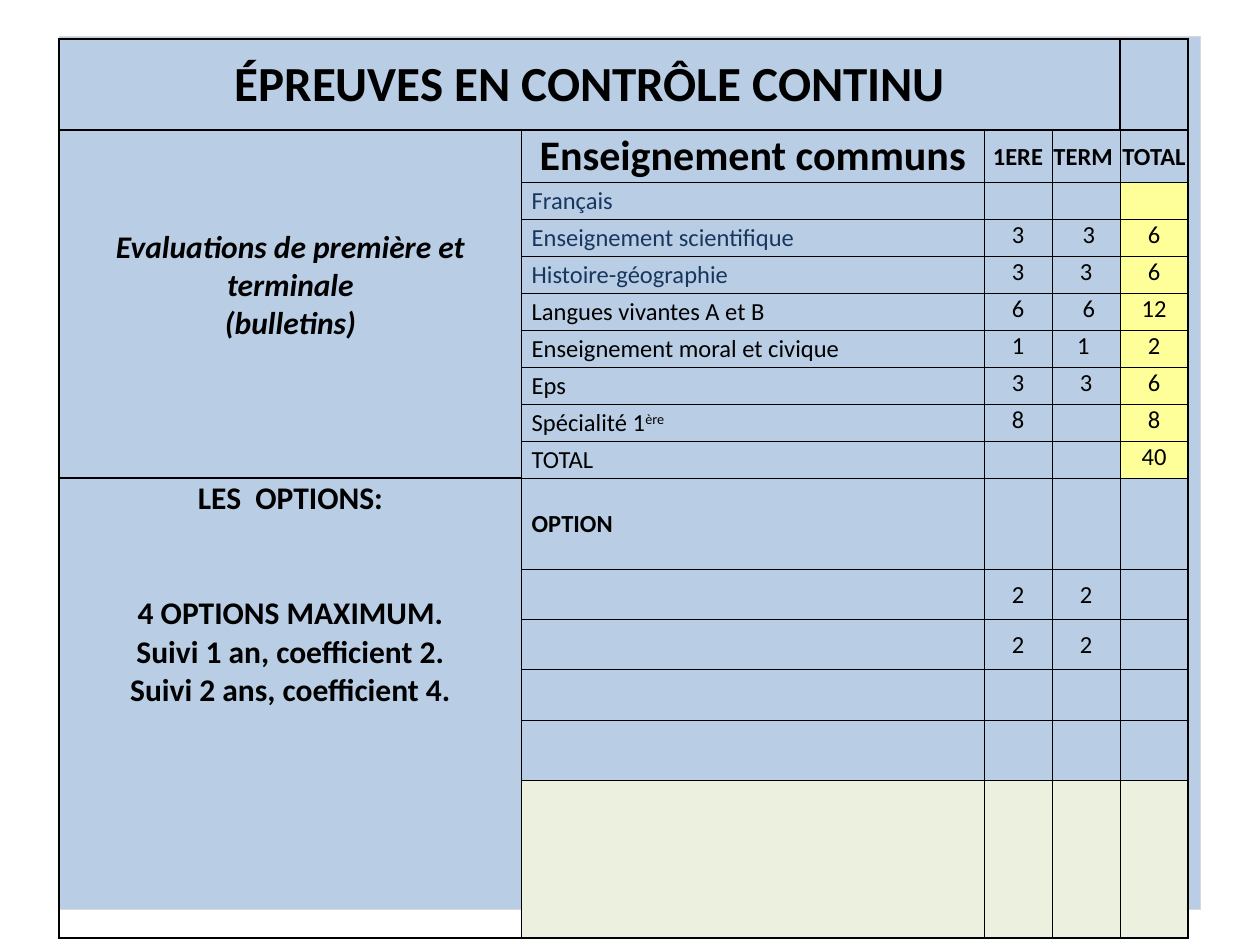
from lxml import etree
from pptx import Presentation
from pptx.dml.color import RGBColor
from pptx.enum.shapes import MSO_SHAPE
from pptx.enum.text import MSO_ANCHOR, PP_ALIGN
from pptx.oxml.ns import qn
from pptx.util import Inches, Pt

RECT = MSO_SHAPE.RECTANGLE
TOP, MID = MSO_ANCHOR.TOP, MSO_ANCHOR.MIDDLE
LEFT, CENTER = PP_ALIGN.LEFT, PP_ALIGN.CENTER

BLACK, NAVY = "000000", "17375E"
BLUE, GRAY = "B9CDE5", "D9D9D9"
YELLOW, GREEN = "FFFF99", "EBF1DE"
THIN, THICK = 0.5, 1.5

COLS = [3.67, 3.67, 0.54, 0.54, 0.54]
ROWS = [0.72, 0.41] + [2.35 / 8] * 8 + [0.72] + [0.4] * 3 + [0.48, 1.25]
LAST = len(ROWS) - 1
HEADS = ["1ERE", "TERM ", "TOTAL"]
EXAMS = [
    ("Français", NAVY, "", "", ""),
    ("Enseignement scientifique", NAVY, "3", " 3", "6"),
    ("Histoire-géographie", NAVY, "3", "3", "6"),
    ("Langues vivantes A et B", BLACK, "6", " 6", "12"),
    ("Enseignement moral et civique", BLACK, "1", "1 ", "2"),
    ("Eps", BLACK, "3", "3", "6"),
    ("Spécialité 1", BLACK, "8", "", "8"),
    ("TOTAL", BLACK, "", "", "40"),
]
FIRST = 2
OPTION = FIRST + len(EXAMS)
NOTES = [
    "LES  OPTIONS:",
    "4 OPTIONS MAXIMUM.",
    "Suivi 1 an, coefficient 2.",
    "Suivi 2 ans, coefficient 4.",
]


def color(code):
    return RGBColor.from_string(code)


def style(run, size, bold=False, italic=False, tint=BLACK):
    font = run.font
    font.name, font.size = "Calibri", Pt(size)
    font.bold, font.italic = bold, italic
    font.color.rgb = color(tint)


def write(cell, text, size=14, align=CENTER, anchor=MID, **look):
    cell.vertical_anchor = anchor
    cell.text_frame.text = text
    for para in cell.text_frame.paragraphs:
        para.alignment = align
        for run in para.runs:
            style(run, size, **look)


def label(cell, text, **look):
    cell.margin_left = Inches(0.08)
    write(cell, text, align=LEFT, **look)


def edge(cell, row, col):
    left = col == 0
    widths = {
        "L": left or row == 0,
        "R": col == len(COLS) - 1 or row == 0,
        "T": left or row < 2,
        "B": left or row in (0, LAST),
    }
    props = cell._tc.get_or_add_tcPr()
    for side, heavy in widths.items():
        line = etree.SubElement(props, qn("a:ln" + side))
        line.set("w", str(Pt(THICK if heavy else THIN)))
        fill = etree.SubElement(line, qn("a:solidFill"))
        etree.SubElement(fill, qn("a:srgbClr")).set("val", BLACK)


def dress(cell, row, col):
    cell.margin_left = cell.margin_right = cell.margin_top = Inches(0.01)
    cell.margin_bottom = 0
    edge(cell, row, col)
    if col == len(COLS) - 1 and FIRST <= row < OPTION:
        tint = YELLOW
    elif row == LAST and col > 0:
        tint = GREEN
    else:
        tint = None
    if tint:
        cell.fill.solid()
        cell.fill.fore_color.rgb = color(tint)
    else:
        cell.fill.background()
    if not cell.text_frame.text:
        para = cell.text_frame.paragraphs[0]._p
        etree.SubElement(para, qn("a:endParaRPr")).set("sz", "1400")


def panel(slide, left, top, width, height):
    shape = slide.shapes.add_shape(RECT, left, top, width, height)
    shape.shadow.inherit = False
    shape.fill.solid()
    shape.fill.fore_color.rgb = color(BLUE)
    shape.line.color.rgb = color(GRAY)
    shape.line.width = Pt(0.75)


def header(grid):
    grid.cell(0, 0).merge(grid.cell(0, 3))
    write(grid.cell(0, 0), "ÉPREUVES EN CONTRÔLE CONTINU", 28, bold=True)
    write(grid.cell(1, 1), "Enseignement communs", 24, bold=True)
    for col, text in enumerate(HEADS, 2):
        write(grid.cell(1, col), text, bold=True)


def exams(grid):
    side = grid.cell(1, 0)
    side.merge(grid.cell(OPTION - 1, 0))
    side.margin_bottom = Inches(0.3)
    text = "Evaluations de première et terminale\v(bulletins)"
    write(side, text, 18, bold=True, italic=True)
    for row, (name, tint, *marks) in enumerate(EXAMS, FIRST):
        label(grid.cell(row, 1), name, tint=tint)
        for col, mark in enumerate(marks, 2):
            if mark:
                write(grid.cell(row, col), mark, anchor=TOP)
        if name.startswith("Spécialité"):
            run = grid.cell(row, 1).text_frame.paragraphs[0].add_run()
            run.text = "ère"
            style(run, 14)
            run._r.get_or_add_rPr().set("baseline", "30000")


def options(grid):
    side = grid.cell(OPTION, 0)
    side.merge(grid.cell(LAST, 0))
    write(side, "\n".join(NOTES), 18, anchor=TOP, bold=True)
    side.text_frame.paragraphs[1].space_before = Pt(44)
    label(grid.cell(OPTION, 1), "OPTION", bold=True)
    for row in (OPTION + 1, OPTION + 2):
        for col in (2, 3):
            write(grid.cell(row, col), "2")


def table(slide, left, top, width, height):
    frame = slide.shapes.add_table(len(ROWS), len(COLS), left, top, width, height)
    grid = frame.table
    grid.first_row = grid.horz_banding = False
    for col, size in zip(grid.columns, COLS):
        col.width = Inches(size)
    for row, size in zip(grid.rows, ROWS):
        row.height = Inches(size)
    for row in range(len(ROWS)):
        for col in range(len(COLS)):
            dress(grid.cell(row, col), row, col)
    header(grid)
    exams(grid)
    options(grid)


def main():
    deck = Presentation()
    deck.slide_width, deck.slide_height = Inches(10), Inches(7.5)
    slide = deck.slides.add_slide(deck.slide_layouts[6])
    panel(slide, Inches(0.47), Inches(0.29), Inches(9.06), Inches(6.93))
    table(slide, Inches(0.47), Inches(0.31), Inches(sum(COLS)), Inches(sum(ROWS)))
    deck.save("out.pptx")


if __name__ == "__main__":
    main()
